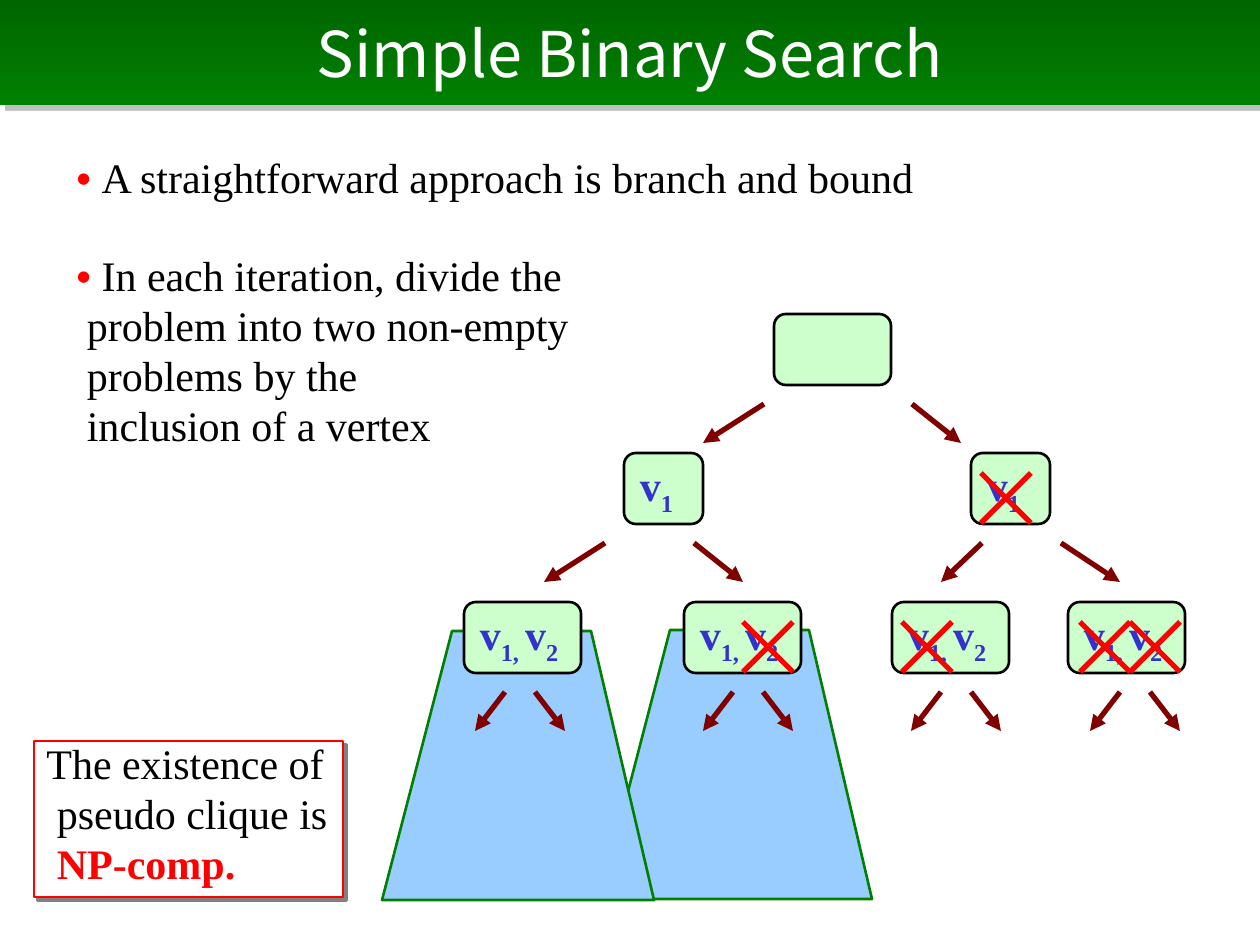
import lxml.etree
import pptx
import pptx.dml.color
import pptx.enum.shapes
import pptx.enum.text
import pptx.oxml.ns
import pptx.util

RGB = pptx.dml.color.RGBColor
SHAPE = pptx.enum.shapes.MSO_SHAPE
ANCHOR = pptx.enum.text.MSO_ANCHOR
ALIGN = pptx.enum.text.PP_ALIGN
qn = pptx.oxml.ns.qn

BLACK, WHITE, RED = RGB(0, 0, 0), RGB(255, 255, 255), RGB(255, 0, 0)
DARK_GREEN, GREEN = RGB(0, 0x66, 0), RGB(0, 0x80, 0)
MINT, SKY = RGB(0xCC, 0xFF, 0xCC), RGB(0x99, 0xCC, 0xFF)
INDIGO, MAROON = RGB(0x33, 0x33, 0xCC), RGB(0x80, 0, 0)
SERIF, SANS = "Times New Roman", "Noto Sans CJK JP"
LINE_GAP, BLOCK_GAP = 5.5, 33.2

TITLE = "Simple Binary Search"
# Paragraphs: space before in points, then runs of (text, colour, bold)
BODY = [
    (LINE_GAP, [("• ", RED, True), ("A straightforward approach is branch and bound", BLACK, False)]),
    (BLOCK_GAP, [("• ", RED, True), ("In each iteration, divide the", BLACK, False)]),
    (LINE_GAP, [(" problem into two non-empty", BLACK, False)]),
    (LINE_GAP, [(" problems by the", BLACK, False)]),
    (LINE_GAP, [(" inclusion of a vertex", BLACK, False)]),
]
NOTE = [
    (LINE_GAP, [("The existence of", BLACK, False)]),
    (LINE_GAP, [(" pseudo clique is", BLACK, False)]),
    (LINE_GAP, [(" ", BLACK, False), ("NP-comp.", RED, True)]),
]

# Label runs: (text, is subscript)
ONE = [("v", False), ("1", True)]
TWO = [("v", False), ("1, ", True), ("v", False), ("2", True)]
NODE_HEIGHT, WIDE, NARROW = 71, 117, 79
LEAF_TOP = 602
NODES = [(774, 314, WIDE, []), (624, 453, NARROW, ONE), (971, 453, NARROW, ONE)]
NODES += [(left, LEAF_TOP, WIDE, TWO) for left in (464, 684, 892, 1068)]

BRANCHES = [  # top, bottom, (start x, end x) of each arrow
    (404, 443, [(764, 703), (912, 961)]),
    (543, 582, [(605, 544), (694, 743), (982, 941), (1061, 1120)]),
]
FORK_CENTRES = [520, 748, 956, 1135]
BRANCHES.append((692, 731, [(centre + side * 15, centre + side * 45)
                            for centre in FORK_CENTRES for side in (-1, 1)]))

CROSS_SIZE = 50
CROSSES = [(981, 473), (743, 622), (902, 622), (1080, 622), (1130, 622)]
FUNNEL = [(70, 0), (0, 269), (272, 269), (209, 0)]
FUNNEL_ORIGINS = [(600, 630), (382, 631)]


def px(value):
    return pptx.util.Emu(round(value * 914400 / 126))


def paint(shape, fill, line=None):
    shape.shadow.inherit = False
    shape.fill.solid()
    shape.fill.fore_color.rgb = fill
    if line is not None:
        shape.line.color.rgb = line
        shape.line.width = pptx.util.Pt(1.5)


def add_shadow(shape, distance, opacity):
    """Give the shape a hard grey shadow down and to the right."""
    shape.shadow.inherit = False
    effects = shape._element.spPr.find(qn("a:effectLst"))
    shadow = lxml.etree.SubElement(effects, qn("a:outerShdw"), dist=str(pptx.util.Pt(distance)),
                                   dir="2700000", algn="ctr", rotWithShape="0")
    color = lxml.etree.SubElement(shadow, qn("a:srgbClr"), val="808080")
    lxml.etree.SubElement(color, qn("a:alpha"), val=str(opacity * 1000))


def add_line(slide, start, end, color, arrow=False):
    line = slide.shapes.add_connector(pptx.enum.shapes.MSO_CONNECTOR.STRAIGHT,
                                      *map(px, start + end))
    line.line.color.rgb = color
    line.line.width = pptx.util.Pt(3)
    if arrow:
        lxml.etree.SubElement(line.line._get_or_add_ln(), qn("a:tailEnd"), type="triangle")
    lxml.etree.SubElement(line._element.spPr, qn("a:effectLst"))


def write_lines(frame, lines):
    frame.vertical_anchor = ANCHOR.TOP
    for index, (gap, runs) in enumerate(lines):
        para = frame.paragraphs[0] if index == 0 else frame.add_paragraph()
        para.alignment = ALIGN.LEFT
        para.line_spacing = 0.8
        para.space_before = pptx.util.Pt(gap)
        para.font.name, para.font.size = SERIF, pptx.util.Pt(24)
        for text, color, bold in runs:
            span = para.add_run()
            span.text = text
            span.font.color.rgb, span.font.bold = color, bold


def add_title(slide):
    banner = slide.shapes.add_shape(SHAPE.RECTANGLE, 0, 0, px(1260), px(105))
    banner.fill.gradient()
    banner.fill.gradient_angle = 270
    for stop, color in zip(banner.fill.gradient_stops, (DARK_GREEN, GREEN)):
        stop.color.rgb = color
    banner.line.fill.background()
    add_shadow(banner, 4.2, 50)
    banner.text_frame.vertical_anchor = ANCHOR.MIDDLE
    para = banner.text_frame.paragraphs[0]
    para.text = TITLE
    para.alignment = ALIGN.CENTER
    para.font.name, para.font.size = SANS, pptx.util.Pt(36)
    para.font.color.rgb = WHITE


def add_funnel(slide, left, top):
    points = [(px(left + x), px(top + y)) for x, y in FUNNEL]
    builder = slide.shapes.build_freeform(*points[0], scale=1.0)
    builder.add_line_segments(points[1:], close=True)
    paint(builder.convert_to_shape(), SKY, GREEN)


def add_node(slide, left, top, width, label):
    node = slide.shapes.add_shape(SHAPE.ROUNDED_RECTANGLE,
                                  *map(px, (left, top, width, NODE_HEIGHT)))
    paint(node, MINT, BLACK)
    node.text_frame.vertical_anchor = ANCHOR.MIDDLE
    para = node.text_frame.paragraphs[0]
    para.alignment = ALIGN.LEFT
    para.font.name, para.font.size = SERIF, pptx.util.Pt(24)
    para.font.bold, para.font.color.rgb = True, INDIGO
    for text, is_subscript in label:
        span = para.add_run()
        span.text = text
        if is_subscript:
            span._r.get_or_add_rPr().set("baseline", "-25000")


def main():
    deck = pptx.Presentation()
    deck.slide_width, deck.slide_height = px(1260), px(945)
    slide = deck.slides.add_slide(deck.slide_layouts[6])

    add_title(slide)
    body = slide.shapes.add_textbox(*map(px, (64, 155, 1091, 456)))
    body.text_frame.word_wrap = True
    write_lines(body.text_frame, BODY)

    for origin in FUNNEL_ORIGINS:
        add_funnel(slide, *origin)
    for node in NODES:
        add_node(slide, *node)
    for top, bottom, arrows in BRANCHES:
        for start, end in arrows:
            add_line(slide, (start, top), (end, bottom), MAROON, arrow=True)
    for left, top in CROSSES:
        right, bottom = left + CROSS_SIZE, top + CROSS_SIZE
        add_line(slide, (right, top), (left, bottom), RED)
        add_line(slide, (right, bottom), (left, top), RED)

    note = slide.shapes.add_shape(SHAPE.RECTANGLE, *map(px, (34, 741, 309, 156)))
    paint(note, WHITE, RED)
    add_shadow(note, 2.8, 100)
    note.text_frame.word_wrap = False
    write_lines(note.text_frame, NOTE)

    deck.save("out.pptx")


if __name__ == "__main__":
    main()
